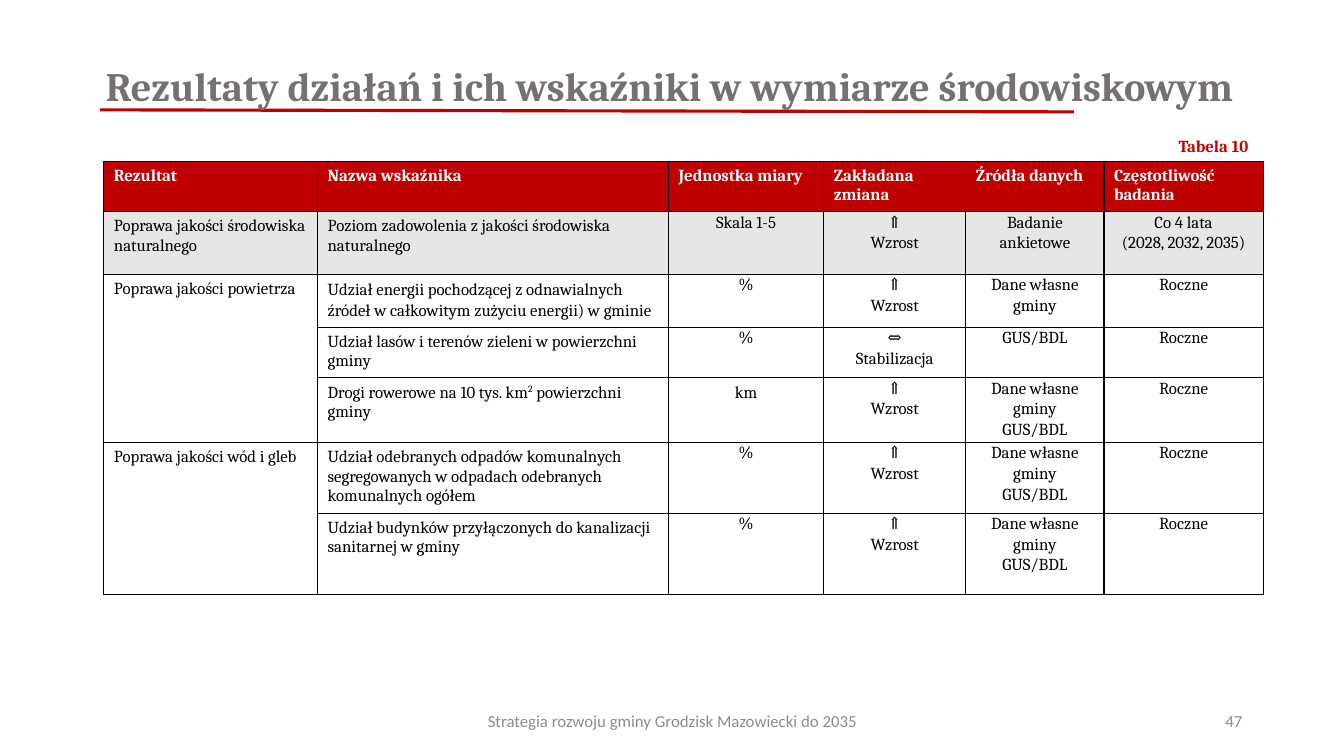
from lxml.etree import SubElement
from pptx import Presentation
from pptx.dml.color import RGBColor
from pptx.enum.shapes import MSO_CONNECTOR
from pptx.enum.text import MSO_ANCHOR, MSO_AUTO_SIZE, PP_ALIGN
from pptx.oxml.ns import qn
from pptx.util import Inches, Pt

COLORS = {
    "red": "C00000",
    "title": "767171",
    "footer": "8C8C8C",
    "band": "E7E6E6",
    "white": "FFFFFF",
    "black": "000000",
}
COLUMN_WIDTHS = [2.12, 3.48, 1.54, 1.41, 1.37, 1.58]
ROW_HEIGHTS = [0.49, 0.62, 0.51, 0.49, 0.61, 0.68, 0.81]
GROWTH = "⇑\nWzrost"
MUNICIPAL_AND_STATISTICS = "Dane własne gminy\vGUS/BDL"
HEADERS = ["Rezultat", "Nazwa wskaźnika", "Jednostka miary", "Zakładana zmiana",
           "Źródła danych", "Częstotliwość badania"]
INDICATORS = [
    ["Poprawa jakości środowiska naturalnego",
     "Poziom zadowolenia z jakości środowiska naturalnego",
     "Skala 1-5", GROWTH, "Badanie ankietowe", "Co 4 lata\n(2028, 2032, 2035)"],
    ["Poprawa jakości powietrza",
     "Udział energii pochodzącej z odnawialnych źródeł w całkowitym zużyciu energii) w gminie",
     "%", GROWTH, "Dane własne gminy", "Roczne"],
    ["", "Udział lasów i terenów zieleni w powierzchni gminy",
     "%", "⇔\nStabilizacja", "GUS/BDL", "Roczne"],
    ["", ("Drogi rowerowe na 10 tys. km", "2", " powierzchni gminy"),
     "km", GROWTH, MUNICIPAL_AND_STATISTICS, "Roczne"],
    ["Poprawa jakości wód i gleb",
     "Udział odebranych odpadów komunalnych segregowanych w odpadach odebranych "
     "komunalnych ogółem",
     "%", GROWTH, MUNICIPAL_AND_STATISTICS, "Roczne"],
    ["", "Udział budynków przyłączonych do kanalizacji sanitarnej w gminy",
     "%", GROWTH, MUNICIPAL_AND_STATISTICS, "Roczne"],
]
RESULT_SPANS = [(2, 4), (5, 6)]
FIRST_CENTERED_COLUMN = 2
ENERGY_CELL = (2, 1)
ROAD_UNIT_CELL = (4, 2)


def format_paragraph(paragraph, color, size=12, font="Cambria", bold=False,
                     align=PP_ALIGN.LEFT):
    paragraph.alignment = align
    paragraph.font.name = font
    paragraph.font.size = Pt(size)
    paragraph.font.bold = bold
    paragraph.font.color.rgb = RGBColor.from_string(COLORS[color])


def place(shape, left, top, width, height):
    shape.left, shape.top = Inches(left), Inches(top)
    shape.width, shape.height = Inches(width), Inches(height)


def add_title(slide, text):
    title = slide.shapes.title
    place(title, 0.95, 0, 12.02, 1.45)
    frame = title.text_frame
    frame.text = text
    frame.word_wrap = True
    frame.auto_size = MSO_AUTO_SIZE.NONE
    frame.vertical_anchor = MSO_ANCHOR.MIDDLE
    format_paragraph(frame.paragraphs[0], "title", 28.8, bold=True)
    frame.paragraphs[0].line_spacing = Pt(52.8)


def add_title_rule(slide):
    rule = slide.shapes.add_connector(
        MSO_CONNECTOR.STRAIGHT, Inches(0.99), Inches(1.09), Inches(10.65), Inches(1.11))
    rule.line.color.rgb = RGBColor.from_string(COLORS["red"])
    rule.line.width = Pt(2.25)
    SubElement(rule._element.spPr, qn("a:effectLst"))
    slide.shapes.title._element.addprevious(rule._element)


def add_label(slide, text, box, color, anchor=MSO_ANCHOR.MIDDLE, **style):
    label = slide.shapes.add_textbox(0, 0, 0, 0)
    place(label, *box)
    frame = label.text_frame
    frame.text = text
    frame.word_wrap = True
    frame.vertical_anchor = anchor
    format_paragraph(frame.paragraphs[0], color, **style)


def set_borders(cell):
    properties = cell._tc.get_or_add_tcPr()
    for position, side in enumerate(("lnL", "lnR", "lnT", "lnB")):
        border = properties.makeelement(qn(f"a:{side}"), {"w": str(Pt(1))})
        fill = SubElement(border, qn("a:solidFill"))
        SubElement(fill, qn("a:srgbClr"), val=COLORS["black"])
        properties.insert(position, border)


def write_cell(cell, content):
    if isinstance(content, str):
        cell.text = content
        return
    paragraph = cell.text_frame.paragraphs[0]
    for part in content:
        run = paragraph.add_run()
        run.text = part
        if part == "2":
            run._r.get_or_add_rPr().set("baseline", "30000")


def fill_cell(cell, content, row, column):
    centered = row > 0 and column >= FIRST_CENTERED_COLUMN
    compact = centered and (row, column) != ROAD_UNIT_CELL
    write_cell(cell, content)
    if compact:
        cell.margin_left = cell.margin_right = Inches(0.07)
        cell.margin_top = cell.margin_bottom = 0
    for paragraph in cell.text_frame.paragraphs:
        format_paragraph(paragraph, "black" if row else "white", bold=row == 0,
                         align=PP_ALIGN.CENTER if centered else PP_ALIGN.LEFT)
        if compact or (row, column) == ENERGY_CELL:
            paragraph.line_spacing = 1.07
    cell.fill.solid()
    background = {0: "red", 1: "band"}.get(row, "white")
    cell.fill.fore_color.rgb = RGBColor.from_string(COLORS[background])
    set_borders(cell)


def add_indicator_table(slide):
    rows = [HEADERS] + INDICATORS
    table = slide.shapes.add_table(
        len(rows), len(HEADERS), Inches(1.03), Inches(1.6),
        Inches(sum(COLUMN_WIDTHS)), Inches(sum(ROW_HEIGHTS))).table
    table.horz_banding = False
    for column, width in zip(table.columns, COLUMN_WIDTHS):
        column.width = Inches(width)
    for row, height in zip(table.rows, ROW_HEIGHTS):
        row.height = Inches(height)
    for row, contents in enumerate(rows):
        for column, content in enumerate(contents):
            fill_cell(table.cell(row, column), content, row, column)
    for first, last in RESULT_SPANS:
        table.cell(first, 0).merge(table.cell(last, 0))


def main():
    presentation = Presentation()
    presentation.slide_width = Inches(13.33)
    presentation.slide_height = Inches(7.5)
    slide = presentation.slides.add_slide(presentation.slide_layouts[5])
    add_title(slide, "Rezultaty działań i ich wskaźniki w wymiarze środowiskowym")
    add_title_rule(slide)
    add_label(slide, "Strategia rozwoju gminy Grodzisk Mazowiecki do 2035",
              (4.42, 6.95, 4.5, 0.4), "footer", font="Calibri", align=PP_ALIGN.CENTER)
    add_indicator_table(slide)
    add_label(slide, "47", (9.42, 6.95, 3, 0.4), "footer", font="Calibri",
              align=PP_ALIGN.RIGHT)
    add_label(slide, "Tabela 10", (11.59, 1.3, 1.88, 0.3), "red",
              anchor=MSO_ANCHOR.TOP, bold=True)
    presentation.save("out.pptx")


if __name__ == "__main__":
    main()
